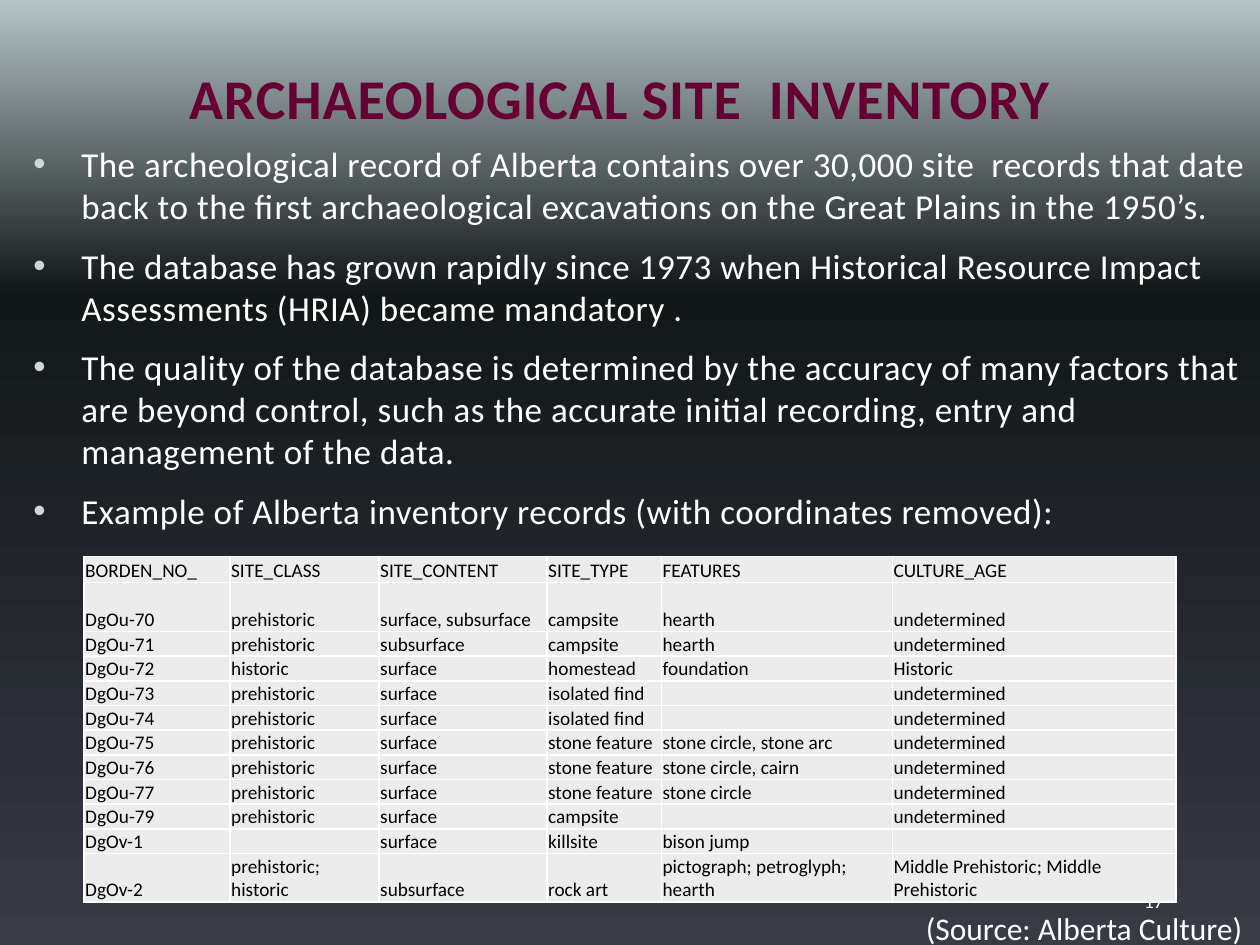
from lxml.etree import SubElement
from pptx import Presentation
from pptx.dml.color import RGBColor
from pptx.enum.text import MSO_ANCHOR as ANCHOR, PP_ALIGN as ALIGN
from pptx.oxml.ns import qn
from pptx.util import Inches, Pt

FONT = "Calibri"
CELL = Inches(1) // 12  # the slide is a grid of 120 columns by 90 rows
COLUMNS, ROWS = 120, 90
WHITE, BLACK, PLUM, PALE, MIST = "FFFFFF", "000000", "660033", "ECECEC", "CDD7D9"
BACKDROP = [(0, "B5C4C7"), (31, "121718"), (100, "383A46")]

FACTS = [
    "The archeological record of Alberta contains over 30,000 site  records that date "
    "back to the first archaeological excavations on the Great Plains in the 1950’s.",
    "The database has grown rapidly since 1973 when Historical Resource Impact "
    "Assessments (HRIA) became mandatory .",
    "The quality of the database is determined by the accuracy of many factors that are "
    "beyond control, such as the accurate initial recording, entry and  management of the data.",
    "Example of Alberta inventory records (with coordinates removed):",
]

RECORDS = [
    ("BORDEN_NO_", "SITE_CLASS", "SITE_CONTENT", "SITE_TYPE", "FEATURES", "CULTURE_AGE"),
    ("DgOu-70", "prehistoric", "surface, subsurface", "campsite", "hearth", "undetermined"),
    ("DgOu-71", "prehistoric", "subsurface", "campsite", "hearth", "undetermined"),
    ("DgOu-72", "historic", "surface", "homestead", "foundation", "Historic"),
    ("DgOu-73", "prehistoric", "surface", "isolated find", "", "undetermined"),
    ("DgOu-74", "prehistoric", "surface", "isolated find", "", "undetermined"),
    ("DgOu-75", "prehistoric", "surface", "stone feature", "stone circle, stone arc", "undetermined"),
    ("DgOu-76", "prehistoric", "surface", "stone feature", "stone circle, cairn", "undetermined"),
    ("DgOu-77", "prehistoric", "surface", "stone feature", "stone circle", "undetermined"),
    ("DgOu-79", "prehistoric", "surface", "campsite", "", "undetermined"),
    ("DgOv-1", "", "surface", "killsite", "bison jump", ""),
    ("DgOv-2", "prehistoric; historic", "subsurface", "rock art",
     "pictograph; petroglyph; hearth", "Middle Prehistoric; Middle Prehistoric"),
]
FIELD_WIDTHS = [13.9, 14.2, 16, 10.9, 22, 27]
HEADER_ROW, PLAIN_ROW, TALL_ROW = 2.5, 2.35, 4.65


def color(hex_value):
    return RGBColor.from_string(hex_value)


def grid(*counts):
    return [round(count * CELL) for count in counts]


def add_run(paragraph, text, size, hue, bold=False, spacing=0):
    run = paragraph.add_run()
    run.text = text
    run.font.name, run.font.size, run.font.bold = FONT, Pt(size), bold
    run.font.color.rgb = color(hue)
    if spacing:
        run.font._element.set("spc", str(round(spacing * 100)))


def add_frame(slide, box, anchor=ANCHOR.TOP):
    frame = slide.shapes.add_textbox(*grid(*box)).text_frame
    frame.word_wrap = True
    frame.vertical_anchor = anchor
    return frame


def add_line(slide, box, text, size, hue, align=ALIGN.LEFT, anchor=ANCHOR.TOP, **style):
    paragraph = add_frame(slide, box, anchor).paragraphs[0]
    paragraph.alignment = align
    add_run(paragraph, text, size, hue, **style)


def paint_background(slide):
    fill = slide.background.fill
    fill.gradient()
    fill.gradient_angle = 270
    stops = slide.element.find(".//" + qn("a:gsLst"))
    for stop in list(stops):
        stops.remove(stop)
    for percent, hue in BACKDROP:
        stop = SubElement(stops, qn("a:gs"), pos=str(percent * 1000))
        SubElement(stop, qn("a:srgbClr"), val=hue)


def add_facts(slide, box):
    frame = add_frame(slide, box)
    for index, fact in enumerate(FACTS):
        paragraph = frame.add_paragraph() if index else frame.paragraphs[0]
        indent = Inches(0.38)
        properties = paragraph._p.get_or_add_pPr()
        properties.set("marL", str(indent))
        properties.set("indent", str(-indent))
        paragraph.space_before = Pt(4 if index else 0)
        paragraph.space_after = Pt(6)
        bullet_color = SubElement(properties, qn("a:buClr"))
        SubElement(bullet_color, qn("a:srgbClr"), val=MIST)
        SubElement(properties, qn("a:buFont"), typeface="Arial")
        SubElement(properties, qn("a:buChar"), char="•")
        add_run(paragraph, fact, 20, WHITE, spacing=0.3)


def style_cell(cell):
    cell.margin_left = cell.margin_right = cell.margin_top = Inches(0.01)
    cell.margin_bottom = 0
    cell.vertical_anchor = ANCHOR.BOTTOM
    # Borders come before the fill in the cell properties
    properties = cell._tc.get_or_add_tcPr()
    for side in ("lnL", "lnR", "lnT", "lnB"):
        border = SubElement(properties, qn("a:" + side), w=str(Pt(1)))
        line_fill = SubElement(border, qn("a:solidFill"))
        SubElement(line_fill, qn("a:srgbClr"), val=WHITE)
    cell.fill.solid()
    cell.fill.fore_color.rgb = color(PALE)


def add_inventory(slide, box):
    table = slide.shapes.add_table(len(RECORDS), len(FIELD_WIDTHS), *grid(*box)).table
    table.first_row = table.horz_banding = False
    for column, width in zip(table.columns, grid(*FIELD_WIDTHS)):
        column.width = width
    plain_rows = [PLAIN_ROW] * (len(RECORDS) - 3)
    heights = grid(HEADER_ROW, TALL_ROW, *plain_rows, TALL_ROW)
    for row, height, record in zip(table.rows, heights, RECORDS):
        row.height = height
        for cell, value in zip(row.cells, record):
            style_cell(cell)
            paragraph = cell.text_frame.paragraphs[0]
            if value:
                add_run(paragraph, value, 11, BLACK)
            else:  # keeps an empty cell as low as its row
                SubElement(paragraph._p, qn("a:endParaRPr"), sz="1100")


def build_slide(slide):
    paint_background(slide)
    # Heading and page number
    add_line(slide, (7, -2, 104, 15), "ARCHAEOLOGICAL SITE  INVENTORY", 32, PLUM,
             ALIGN.CENTER, ANCHOR.BOTTOM, bold=True, spacing=0.5)
    add_line(slide, (99, 83.4, 13, 4.8), "17", 11, WHITE, ALIGN.RIGHT, ANCHOR.MIDDLE)
    # Facts, sample records and their source
    add_facts(slide, (2, 13, 118, 63))
    add_inventory(slide, (8, 53, 104, 33))
    add_line(slide, (87, 86, 33, 4.8), "(Source: Alberta Culture)", 18, WHITE)


def main():
    deck = Presentation()
    deck.slide_width, deck.slide_height = grid(COLUMNS, ROWS)
    build_slide(deck.slides.add_slide(deck.slide_layouts[6]))
    deck.save("out.pptx")


if __name__ == "__main__":
    main()
